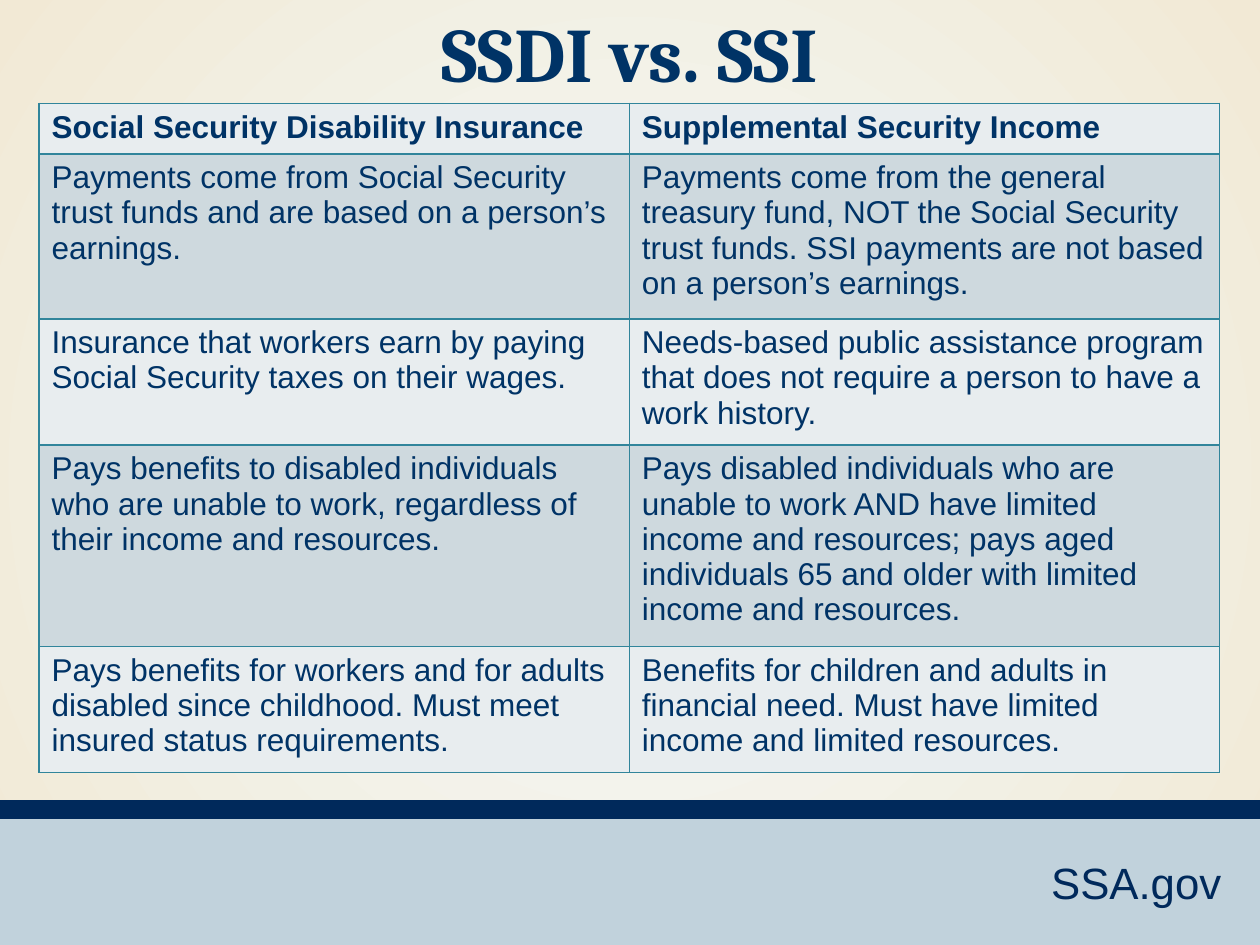
from lxml.etree import SubElement
from pptx import Presentation
from pptx.dml.color import RGBColor
from pptx.enum.shapes import MSO_SHAPE
from pptx.enum.text import MSO_ANCHOR, PP_ALIGN
from pptx.oxml.ns import qn
from pptx.util import Inches, Pt

COLORS = {
    "center": "F3FAFB", "edge": "F2E9D5", "footer": "C1D2DC", "navy": "00295B",
    "text": "003366", "light": "E8EDEF", "dark": "CED9DE", "border": "31859B",
}
ROW_HEIGHTS = [0.4, 1.31, 0.94, 1.5, 0.94]
COMPARISON = [
    ("Social Security Disability Insurance", "Supplemental Security Income"),
    ("Payments come from Social Security trust funds and are based on a person’s earnings.",
     "Payments come from the general treasury fund, NOT the Social Security trust funds. "
     "SSI payments are not based on a person’s earnings."),
    ("Insurance that workers earn by paying Social Security taxes on their wages.",
     "Needs-based public assistance program that does not require a person to have a work history."),
    ("Pays benefits to disabled individuals who are unable to work, regardless of their "
     "income and resources.",
     "Pays disabled individuals who are unable to work AND have limited income and resources; "
     "pays aged individuals 65 and older with limited income and resources."),
    ("Pays benefits for workers and for adults disabled since childhood. Must meet insured "
     "status requirements.",
     "Benefits for children and adults in financial need. Must have limited income and "
     "limited resources."),
]


def color(name):
    return RGBColor.from_string(COLORS[name])


def add_run(paragraph, text, size, font_name, color_name, bold=False):
    run = paragraph.add_run()
    run.text = text
    run.font.size = Pt(size)
    run.font.name = font_name
    run.font.bold = bold
    run.font.color.rgb = color(color_name)


def add_text(slide, left, top, width, height, text, size, font_name, color_name,
             alignment, bold=False):
    shape = slide.shapes.add_textbox(Inches(left), Inches(top), Inches(width), Inches(height))
    frame = shape.text_frame
    frame.word_wrap = True
    frame.vertical_anchor = MSO_ANCHOR.MIDDLE
    paragraph = frame.paragraphs[0]
    paragraph.alignment = alignment
    add_run(paragraph, text, size, font_name, color_name, bold)


def add_bar(slide, left, top, width, height, color_name):
    shape = slide.shapes.add_shape(
        MSO_SHAPE.RECTANGLE, Inches(left), Inches(top), Inches(width), Inches(height))
    shape.shadow.inherit = False
    shape.fill.solid()
    shape.fill.fore_color.rgb = color(color_name)
    shape.line.fill.background()


def set_background(slide):
    fill = slide.background.fill
    fill.gradient()
    for stop, name in zip(fill.gradient_stops, ("center", "edge")):
        stop.color.rgb = color(name)
    # Radial gradient spreading from the slide's center
    gradient = slide.element.find(".//" + qn("a:gradFill"))
    gradient.remove(gradient.find(qn("a:lin")))
    radial = SubElement(gradient, qn("a:path"), path="circle")
    SubElement(radial, qn("a:fillToRect"), {side: "50000" for side in "ltrb"})


def add_footer(slide, left, top, width, height):
    add_bar(slide, left, top + 0.1, width, height - 0.1, "footer")
    add_bar(slide, left, top, width, 0.15, "navy")
    add_text(slide, left + width - 3.28, top + 0.39, 3.07, 0.52, "SSA.gov", 25, "Arial",
             "navy", PP_ALIGN.RIGHT)


def set_borders(cell):
    properties = cell._tc.get_or_add_tcPr()
    for index, side in enumerate(("a:lnL", "a:lnR", "a:lnT", "a:lnB")):
        line = properties.makeelement(qn(side), {"w": str(Pt(1))})
        fill = SubElement(line, qn("a:solidFill"))
        SubElement(fill, qn("a:srgbClr"), val=COLORS["border"])
        properties.insert(index, line)


def add_comparison(slide, left, top, width):
    table = slide.shapes.add_table(
        len(COMPARISON), 2, Inches(left), Inches(top), Inches(width),
        Inches(sum(ROW_HEIGHTS))).table
    for column in table.columns:
        column.width = Inches(width / 2)
    for index, (row, texts) in enumerate(zip(table.rows, COMPARISON)):
        row.height = Inches(ROW_HEIGHTS[index])
        for cell, text in zip(row.cells, texts):
            cell.fill.solid()
            cell.fill.fore_color.rgb = color("dark" if index % 2 else "light")
            set_borders(cell)
            add_run(cell.text_frame.paragraphs[0], text, 18, "Arial", "text", index == 0)


def build_slide(presentation):
    slide = presentation.slides.add_slide(presentation.slide_layouts[6])
    set_background(slide)
    add_footer(slide, 0, 6.35, 10, 1.15)
    # Title
    add_text(slide, 0, 0, 10, 0.82, "SSDI vs. SSI", 44, "Cambria", "text",
             PP_ALIGN.CENTER, bold=True)
    add_comparison(slide, 0.31, 0.82, 9.37)


def main():
    presentation = Presentation()
    presentation.slide_width = Inches(10)
    presentation.slide_height = Inches(7.5)
    build_slide(presentation)
    presentation.save("out.pptx")


if __name__ == "__main__":
    main()
